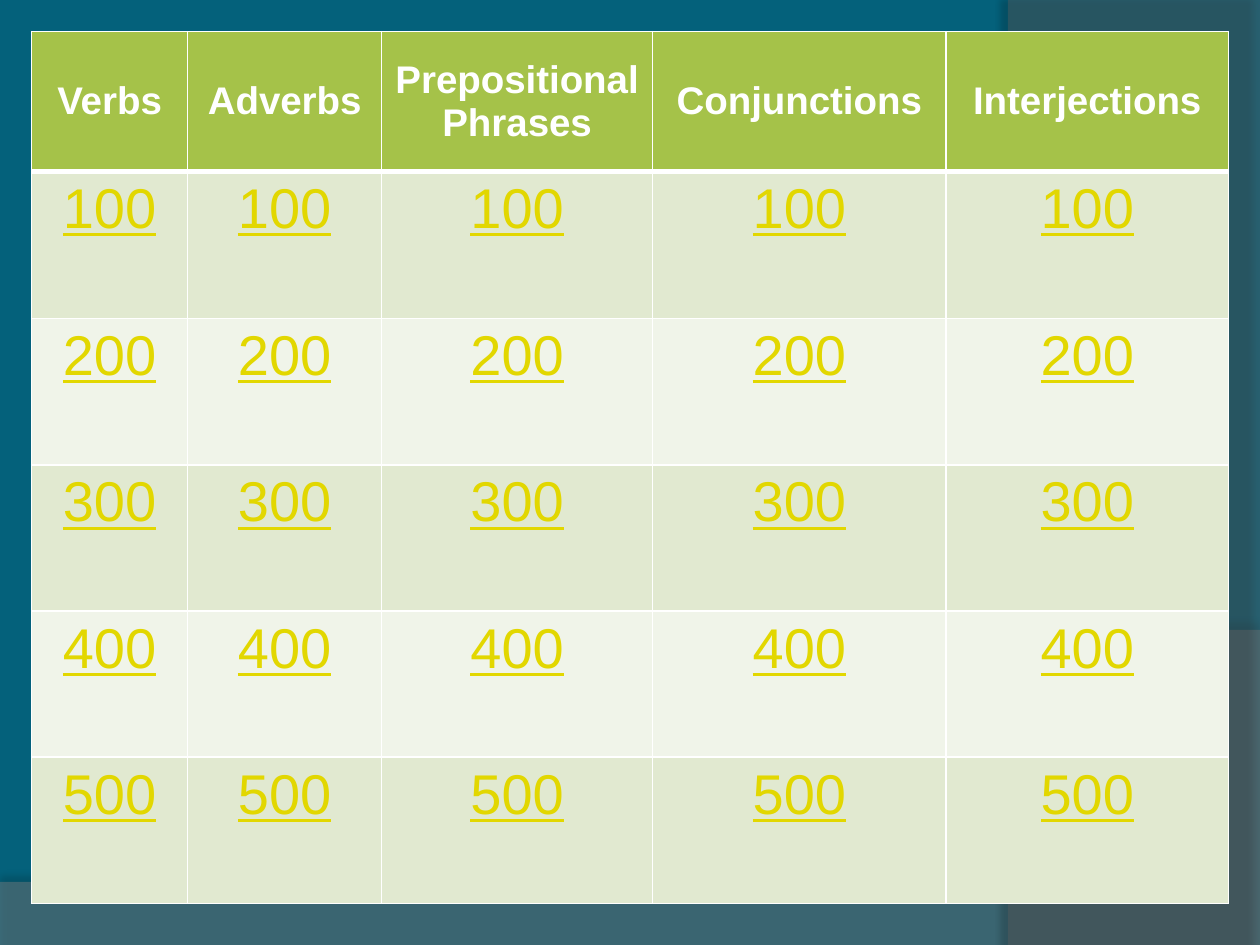
from lxml.etree import SubElement
from pptx import Presentation
from pptx.dml.color import RGBColor
from pptx.enum.text import MSO_ANCHOR, PP_ALIGN
from pptx.oxml.ns import qn
from pptx.util import Inches, Pt

BACKGROUND = RGBColor(0x04, 0x61, 0x7B)
WAVE_GRAY = RGBColor(0x7F, 0x7F, 0x7F)
SIDE_GRAY = RGBColor(0x5E, 0x5E, 0x5E)
HEADER_GREEN = RGBColor(0xA5, 0xC2, 0x49)
BANDS = [RGBColor(0xE1, 0xE9, 0xD0), RGBColor(0xF0, 0xF4, 0xE9)]
WHITE = RGBColor(0xFF, 0xFF, 0xFF)
SCORE_YELLOW = RGBColor(0xE2, 0xD7, 0x00)

CATEGORIES = ["Verbs", "Adverbs", "Prepositional Phrases", "Conjunctions", "Interjections"]
COLUMN_WIDTHS = [1.24, 1.54, 2.15, 2.33, 2.24]
ROW_HEIGHTS = [1.11, 1.17, 1.16, 1.16, 1.16, 1.16]


def curve(start, control1, control2, end, steps=40):
    """Return points along a cubic Bezier curve."""
    points = []
    for step in range(steps + 1):
        t = step / steps
        weights = ((1 - t) ** 3, 3 * t * (1 - t) ** 2, 3 * t * t * (1 - t), t ** 3)
        points.append(tuple(sum(w * p[axis] for w, p in zip(weights, (start, control1, control2, end)))
                            for axis in (0, 1)))
    return points


def add_solid_color(parent, color, opacity=100):
    fill = SubElement(parent, qn("a:solidFill"))
    value = SubElement(fill, qn("a:srgbClr"), val=str(color))
    if opacity < 100:
        SubElement(value, qn("a:alpha"), val=str(opacity * 1000))


deck = Presentation()
deck.slide_width, deck.slide_height = Inches(10), Inches(7.5)
page = deck.slides.add_slide(deck.slide_layouts[6])
page.background.fill.solid()
page.background.fill.fore_color.rgb = BACKGROUND

# Translucent waves: outline, colour, opacity, shadow opacity, distance, direction
bottom_wave = [(0, 7.05), (0, 7.51), (10, 7.51)] + curve((10, 5.2), (5.59, 7.29), (3.91, 7.19), (0, 7.05))
side_wave = [(10, 0.02), (10, 7.5)] + curve((8.21, 7.5), (9.35, 6.19), (10.18, 3), (8, 0))
waves = [
    (bottom_wave, WAVE_GRAY, 45, 35, 3.5, 270),
    (side_wave, SIDE_GRAY, 40, 45, 4, 180),
]
for outline, color, opacity, shadow_opacity, distance, direction in waves:
    builder = page.shapes.build_freeform(*outline[0], scale=Inches(1))
    builder.add_line_segments(outline[1:], close=True)
    wave = builder.convert_to_shape()
    wave.fill.solid()
    wave.fill.fore_color.rgb = color
    value = wave._element.spPr.find(qn("a:solidFill")).find(qn("a:srgbClr"))
    SubElement(value, qn("a:alpha"), val=str(opacity * 1000))
    wave.line.fill.background()
    effects = SubElement(wave._element.spPr, qn("a:effectLst"))
    shadow = SubElement(effects, qn("a:outerShdw"), blurRad=str(Pt(4)), dist=str(Pt(distance)),
                        dir=str(direction * 60000), algn="ctr", rotWithShape="0")
    value = SubElement(shadow, qn("a:srgbClr"), val="000000")
    SubElement(value, qn("a:alpha"), val=str(shadow_opacity * 1000))

# Game board
board = page.shapes.add_table(len(ROW_HEIGHTS), len(CATEGORIES), Inches(0.25), Inches(0.25),
                              Inches(9.5), Inches(6.95)).table
for column, width in zip(board.columns, COLUMN_WIDTHS):
    column.width = Inches(width)
for row, height in zip(board.rows, ROW_HEIGHTS):
    row.height = Inches(height)

for row_index, row in enumerate(board.rows):
    is_header = row_index == 0
    for category, cell in zip(CATEGORIES, row.cells):
        cell.text = category if is_header else str(row_index * 100)
        cell.vertical_anchor = MSO_ANCHOR.MIDDLE if is_header else MSO_ANCHOR.TOP
        para = cell.text_frame.paragraphs[0]
        para.alignment = PP_ALIGN.CENTER
        para.font.name = "Arial"
        para.font.size = Pt(22 if is_header else 32)
        para.font.bold = is_header
        para.font.underline = not is_header
        para.font.color.rgb = WHITE if is_header else SCORE_YELLOW
        properties = cell._tc.get_or_add_tcPr()
        for side in ("L", "R", "T", "B"):
            thick = (is_header and side == "B") or (row_index == 1 and side == "T")
            border = SubElement(properties, qn(f"a:ln{side}"), w=str(Pt(3 if thick else 1)))
            add_solid_color(border, WHITE)
        cell.fill.solid()
        cell.fill.fore_color.rgb = HEADER_GREEN if is_header else BANDS[(row_index - 1) % 2]

deck.save("out.pptx")
